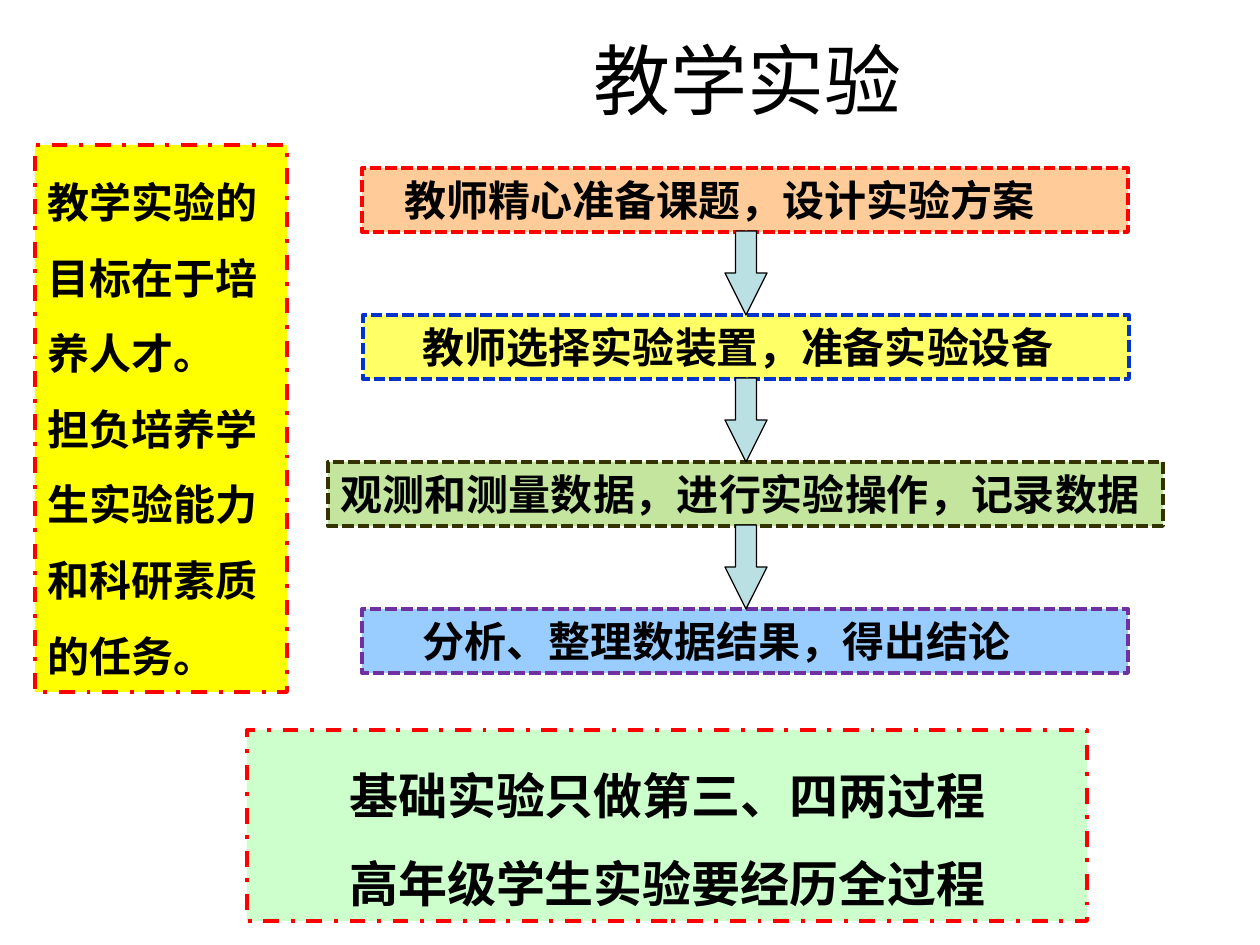
import pptx
import pptx.dml.color
import pptx.enum.dml
import pptx.enum.shapes
import pptx.enum.text
import pptx.oxml.ns
import pptx.util
from lxml import etree

RGB = pptx.dml.color.RGBColor
SHAPES = pptx.enum.shapes.MSO_SHAPE
DASHES = pptx.enum.dml.MSO_LINE
ALIGN = pptx.enum.text.PP_ALIGN
ANCHOR = pptx.enum.text.MSO_ANCHOR

BLACK = RGB(0x00, 0x00, 0x00)
RED = RGB(0xFF, 0x00, 0x00)
YELLOW = RGB(0xFF, 0xFF, 0x00)
PEACH = RGB(0xFF, 0xCC, 0x99)
BLUE = RGB(0x00, 0x33, 0xCC)
GREEN = RGB(0x92, 0xD0, 0x50)
OLIVE = RGB(0x33, 0x33, 0x00)
SKY = RGB(0x99, 0xCC, 0xFF)
PURPLE = RGB(0x70, 0x30, 0xA0)
MINT = RGB(0xCC, 0xFF, 0xCC)
TEAL = RGB(0xBB, 0xE0, 0xE3)

PX_PER_INCH = 126
INSET = 13
STEP_HEIGHT = 64
STEP_PITCH = 147

# text, left and width within the flow, text indent, fill, opacity in %, outline
STEPS = [
    ("教师精心准备课题，设计实验方案", 34, 766, 30, PEACH, 100, RED),
    ("教师选择实验装置，准备实验设备", 35, 766, 47, YELLOW, 60, BLUE),
    ("观测和测量数据，进行实验操作，记录数据", 0, 835, 0, GREEN, 55, OLIVE),
    ("分析、整理数据结果，得出结论", 34, 766, 48, SKY, 100, PURPLE),
]


def px(length):
    return pptx.util.Inches(length / PX_PER_INCH)


def add_text(shape, lines, size, bold=True, font="Arial", align=ALIGN.LEFT,
             spacing=1.0, anchor=ANCHOR.TOP, indent=0, wrap=True):
    frame = shape.text_frame
    frame.word_wrap = wrap
    frame.vertical_anchor = anchor
    frame.margin_left = px(INSET + indent)
    for index, line in enumerate(lines):
        para = frame.add_paragraph() if index else frame.paragraphs[0]
        para.alignment = align
        para.line_spacing = spacing
        span = para.add_run()
        span.text = line
        span.font.name = font
        span.font.size = pptx.util.Pt(size)
        span.font.bold = bold
        span.font.color.rgb = BLACK


def add_panel(page, box, fill, outline, kind=SHAPES.RECTANGLE, width=2.25,
              dash=DASHES.SOLID, opacity=100):
    panel = page.shapes.add_shape(kind, *map(px, box))
    panel.shadow.inherit = False
    panel.fill.solid()
    panel.fill.fore_color.rgb = fill
    panel.line.color.rgb = outline
    panel.line.width = pptx.util.Pt(width)
    panel.line.dash_style = dash
    if opacity < 100:
        qn = pptx.oxml.ns.qn
        color = panel.fill._xPr.find(qn("a:solidFill")).find(qn("a:srgbClr"))
        etree.SubElement(color, qn("a:alpha"), val=str(opacity * 1000))
    return panel


def add_title(page, box):
    title = page.shapes.add_textbox(*map(px, box))
    add_text(title, ["教学实验"], 44, bold=False, align=ALIGN.CENTER,
             anchor=ANCHOR.MIDDLE)


def add_flow(page, left, top):
    """Stack the steps, with an arrow filling each gap between them."""
    for index, (text, offset, width, indent, fill, opacity, outline) in enumerate(STEPS):
        step_top = top + index * STEP_PITCH
        step = add_panel(page, (left + offset, step_top, width, STEP_HEIGHT),
                         fill, outline, dash=DASHES.SQUARE_DOT, opacity=opacity)
        add_text(step, [text], 24, indent=indent, wrap=index != 2)
    for index in range(len(STEPS) - 1):
        arrow_top = top + index * STEP_PITCH + STEP_HEIGHT - 1
        arrow = add_panel(page, (left + 397, arrow_top, 42, 84), TEAL, BLACK,
                          kind=SHAPES.DOWN_ARROW, width=0.75)
        arrow.adjustments[0] = 0.5
        arrow.adjustments[1] = 1


def add_goal(page, box):
    goal = add_panel(page, box, YELLOW, RED, dash=DASHES.DASH_DOT)
    add_text(goal, ["教学实验的目标在于培养人才。",
                    "担负培养学生实验能力和科研素质的任务。"], 24, spacing=1.5)


def add_summary(page, box):
    summary = add_panel(page, box, MINT, RED, dash=DASHES.DASH_DOT)
    add_text(summary, ["基础实验只做第三、四两过程", "高年级学生实验要经历全过程"], 28,
             font="Noto Sans CJK SC", align=ALIGN.CENTER, spacing=1.5)


def main():
    deck = pptx.Presentation()
    deck.slide_width = px(1260)
    deck.slide_height = px(945)
    page = deck.slides.add_slide(deck.slide_layouts[6])
    add_title(page, (422, 21, 651, 116))
    add_flow(page, 328, 168)
    add_goal(page, (35, 145, 252, 547))
    add_summary(page, (247, 730, 840, 191))
    deck.save("out.pptx")


if __name__ == "__main__":
    main()
